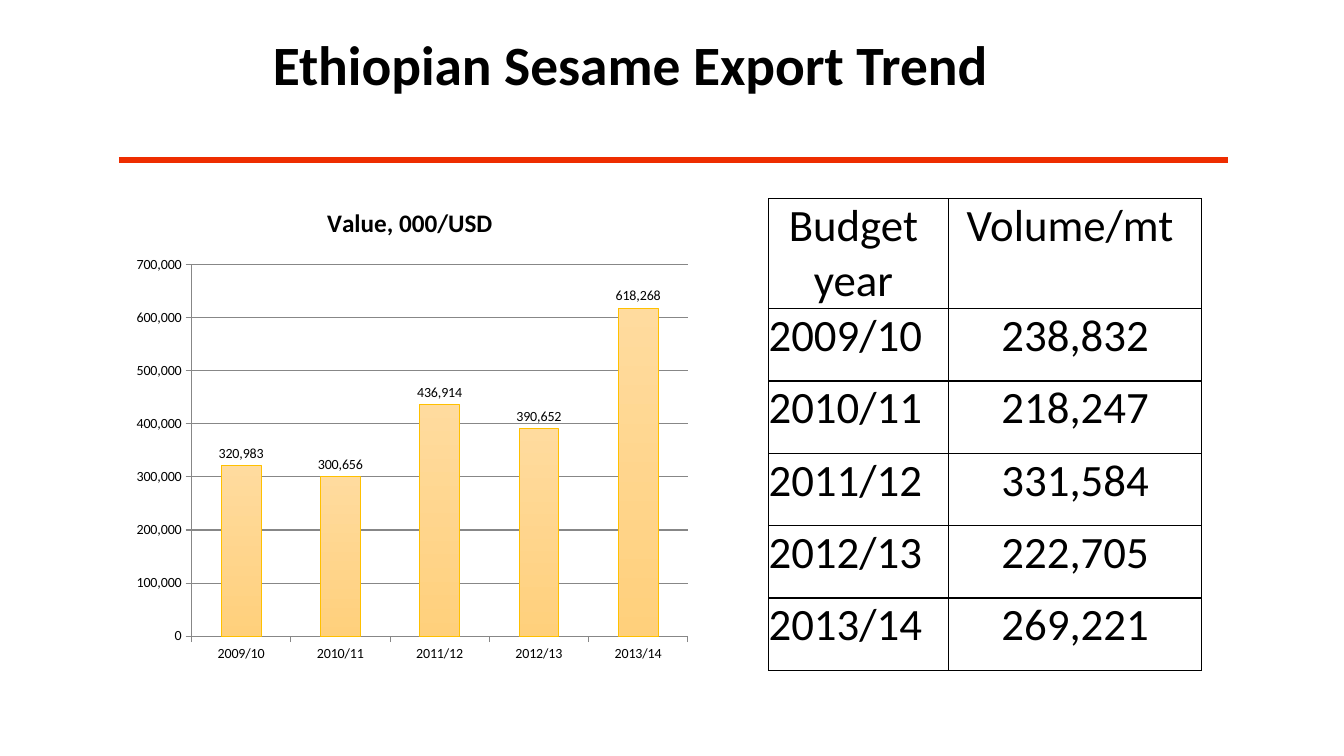
"""Build the Ethiopian sesame export slide with its value chart and volume table."""
from pptx import Presentation
from pptx.chart.data import CategoryChartData
from pptx.dml.color import RGBColor
from pptx.enum.chart import XL_CHART_TYPE, XL_LABEL_POSITION, XL_TICK_MARK
from pptx.enum.shapes import MSO_CONNECTOR, MSO_SHAPE
from pptx.enum.text import MSO_ANCHOR, PP_ALIGN
from pptx.oxml import parse_xml
from pptx.oxml.ns import nsdecls, qn
from pptx.util import Pt

TITLE = "Ethiopian Sesame Export Trend"
CHART_TITLE = "Value, 000/USD "
HEADER = ("Budget year", "Volume/mt")
EXPORTS = [
    ("2009/10", 320983, 238832),
    ("2010/11", 300656, 218247),
    ("2011/12", 436914, 331584),
    ("2012/13", 390652, 222705),
    ("2013/14", 618268, 269221),
]
COLORS = {
    "text": "000000",
    "paper": "FFFFFF",
    "rule": "EE2D00",
    "grid": "878787",
    "bar_top": "FFDB9E",
    "bar_bottom": "FFD07C",
    "bar_line": "FFC000",
}
FONT = "Calibri"
NUMBER = "#,##0"
COL_WIDTHS = (128.5, 181)
HEADER_HEIGHT, ROW_HEIGHT = 78.5, 51.7
HEADER_INSET = 7.2
CHART_WIDTH, CHART_HEIGHT = 411, 348
PLOT = {
    "x": 47.5 / CHART_WIDTH,
    "y": 56.5 / CHART_HEIGHT,
    "w": 354.5 / CHART_WIDTH,
    "h": 265.5 / CHART_HEIGHT,
}


def rgb(name):
    return RGBColor.from_string(COLORS[name])


def set_font(font, size, bold=False):
    font.name, font.size, font.bold = FONT, Pt(size), bold
    font.color.rgb = rgb("text")


def set_line(line, color, width):
    line.color.rgb = rgb(color)
    line.width = Pt(width)


def add_title(s):
    sp = s.shapes.add_shape(MSO_SHAPE.RECTANGLE, Pt(131.8), Pt(22.3), Pt(646.6), Pt(68.4))
    sp.shadow.inherit = False
    sp.fill.solid()
    sp.fill.fore_color.rgb = rgb("paper")
    set_line(sp.line, "paper", 1)
    tf = sp.text_frame
    tf.word_wrap = True
    tf.vertical_anchor = MSO_ANCHOR.MIDDLE
    tf.margin_right, tf.margin_bottom = Pt(16.5), Pt(20.6)
    p = tf.paragraphs[0]
    p.text, p.alignment, p.line_spacing = TITLE, PP_ALIGN.CENTER, 0.9
    set_font(p.font, 39.6, True)


def add_rule(s):
    rule = s.shapes.add_connector(
        MSO_CONNECTOR.STRAIGHT, Pt(85), Pt(114.5), Pt(877), Pt(114.5))
    set_line(rule.line, "rule", 4.5)
    rule.element.spPr.append(parse_xml(f"<a:effectLst {nsdecls('a')}/>"))


def add_value_chart(s):
    data = CategoryChartData(number_format=NUMBER)
    data.categories = [year for year, _, _ in EXPORTS]
    data.add_series(CHART_TITLE, [value for _, value, _ in EXPORTS])
    chart = s.shapes.add_chart(
        XL_CHART_TYPE.COLUMN_CLUSTERED, Pt(89.3), Pt(132.5),
        Pt(CHART_WIDTH), Pt(CHART_HEIGHT), data).chart
    set_font(chart.font, 10)
    chart.has_legend = False
    chart.has_title = True
    p = chart.chart_title.text_frame.paragraphs[0]
    p.text = CHART_TITLE
    set_font(p.font, 18, True)

    for axis in (chart.category_axis, chart.value_axis):
        axis.major_tick_mark = XL_TICK_MARK.OUTSIDE
        axis.minor_tick_mark = XL_TICK_MARK.NONE
        set_line(axis.format.line, "grid", 0.75)
    axis = chart.value_axis
    axis.minimum_scale, axis.maximum_scale, axis.major_unit = 0, 700000, 100000
    axis.tick_labels.number_format = NUMBER
    axis.tick_labels.number_format_is_linked = False
    set_line(axis.major_gridlines.format.line, "grid", 0.75)

    plot = chart.plots[0]
    plot.gap_width, plot.vary_by_categories = 150, False
    bars = plot.series[0].format
    bars.fill.gradient()
    bars.fill.gradient_angle = 270
    for stop, color in zip(bars.fill.gradient_stops, ("bar_top", "bar_bottom")):
        stop.color.rgb = rgb(color)
        stop.position = 0 if color == "bar_top" else 1
    set_line(bars.line, "bar_line", 0.5)
    labels = plot.series[0].data_labels
    labels.show_value = True
    labels.position = XL_LABEL_POSITION.OUTSIDE_END
    labels.number_format, labels.number_format_is_linked = NUMBER, False
    set_font(labels.font, 10)

    area = chart.element.find(".//" + qn("c:plotArea"))
    for layout in area.findall(qn("c:layout")):
        area.remove(layout)
    sizes = "".join(f'<c:{key} val="{val:.4f}"/>' for key, val in PLOT.items())
    area.insert(0, parse_xml(
        f'<c:layout {nsdecls("c")}><c:manualLayout><c:layoutTarget val="inner"/>'
        f'<c:xMode val="edge"/><c:yMode val="edge"/>{sizes}</c:manualLayout></c:layout>'))


def style_cell(cell, text, alignment, inset):
    cell.margin_left = cell.margin_top = cell.margin_bottom = 0
    cell.margin_right = Pt(inset)
    p = cell.text_frame.paragraphs[0]
    p.text, p.alignment = text, alignment
    set_font(p.font, 32)
    props = cell._tc.get_or_add_tcPr()
    for side in ("lnL", "lnR", "lnT", "lnB"):
        props.append(parse_xml(
            f'<a:{side} {nsdecls("a")} w="{Pt(1)}"><a:solidFill>'
            f'<a:srgbClr val="{COLORS["text"]}"/></a:solidFill></a:{side}>'))
    cell.fill.solid()
    cell.fill.fore_color.rgb = rgb("paper")


def add_volume_table(s):
    rows = [HEADER] + [(year, f"{volume:,}") for year, _, volume in EXPORTS]
    heights = [HEADER_HEIGHT] + [ROW_HEIGHT] * len(EXPORTS)
    table = s.shapes.add_table(
        len(rows), len(HEADER), Pt(549), Pt(142),
        Pt(sum(COL_WIDTHS)), Pt(sum(heights))).table
    for column, width in zip(table.columns, COL_WIDTHS):
        column.width = Pt(width)
    for i, (texts, height) in enumerate(zip(rows, heights)):
        table.rows[i].height = Pt(height)
        for j, text in enumerate(texts):
            alignment = PP_ALIGN.LEFT if i > 0 and j == 0 else PP_ALIGN.CENTER
            style_cell(table.cell(i, j), text, alignment, 0 if i else HEADER_INSET)


def main():
    prs = Presentation()
    prs.slide_width, prs.slide_height = Pt(960), Pt(540)
    s = prs.slides.add_slide(prs.slide_layouts[6])
    add_rule(s)
    add_title(s)
    add_value_chart(s)
    add_volume_table(s)
    prs.save("out.pptx")


if __name__ == "__main__":
    main()
